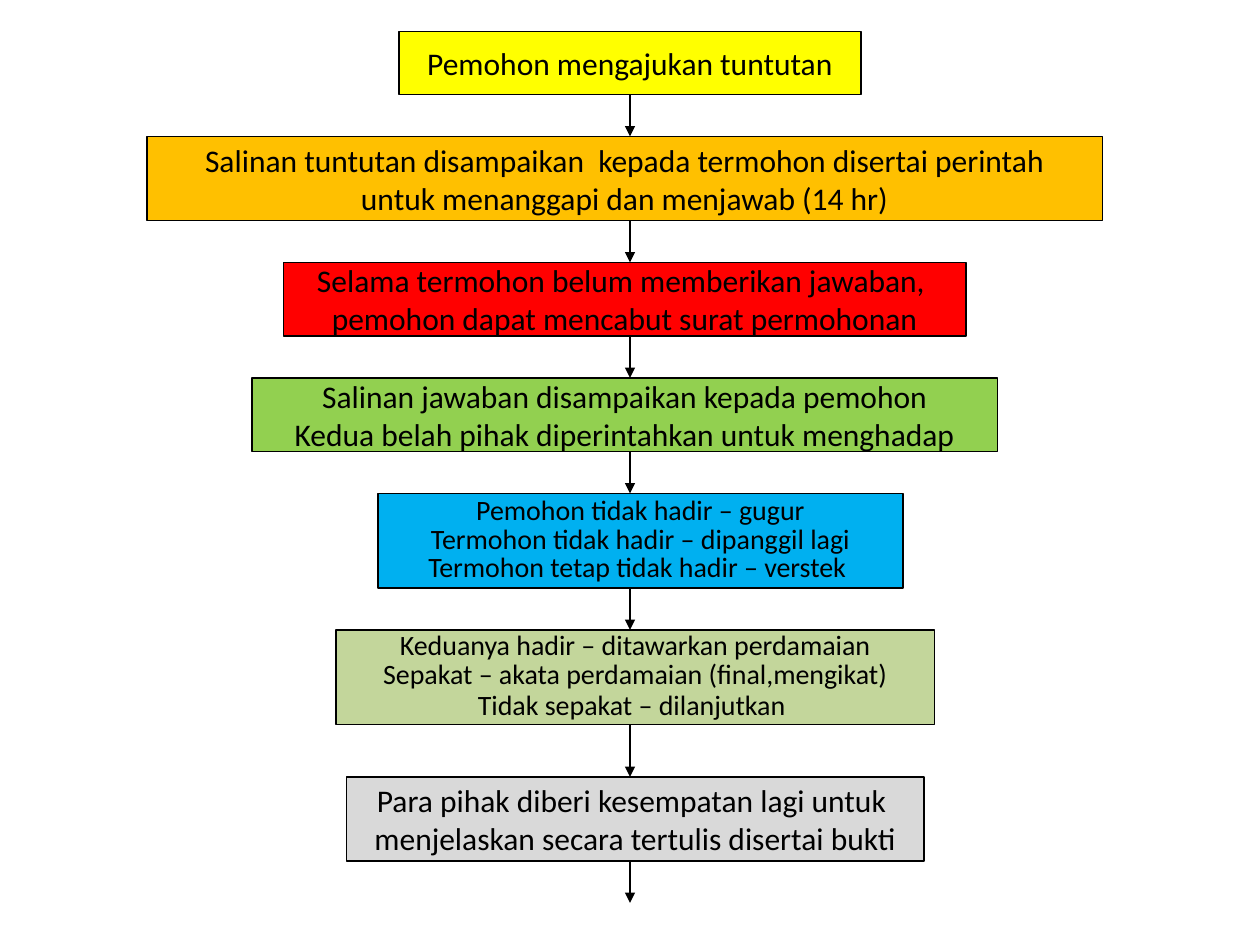
from pptx import Presentation
from pptx.dml.color import RGBColor
from pptx.enum.shapes import MSO_CONNECTOR, MSO_SHAPE
from pptx.enum.text import MSO_ANCHOR, PP_ALIGN
from pptx.oxml.ns import qn
from pptx.util import Inches, Pt
from lxml import etree

RECT = MSO_SHAPE.RECTANGLE
LINE = MSO_CONNECTOR.STRAIGHT
MIDDLE = MSO_ANCHOR.MIDDLE
CENTER = PP_ALIGN.CENTER

BLACK = RGBColor(0x00, 0x00, 0x00)
YELLOW = RGBColor(0xFF, 0xFF, 0x00)
AMBER = RGBColor(0xFF, 0xC0, 0x00)
RED = RGBColor(0xFF, 0x00, 0x00)
GREEN = RGBColor(0x92, 0xD0, 0x50)
BLUE = RGBColor(0x00, 0xB0, 0xF0)
OLIVE = RGBColor(0xC3, 0xD6, 0x9B)
GREY = RGBColor(0xD9, 0xD9, 0xD9)

WIDTH, HEIGHT = Inches(10), Inches(7.5)
COLS, ROWS = 120, 90
AXIS, END = 60, 86
FONT = "Calibri"
LARGE, SMALL = 18, 16
TIGHT = 0.85

STEPS = [
    (38, 3, 44, 6, YELLOW, LARGE, "Pemohon mengajukan tuntutan"),
    (14, 13, 91, 8, AMBER, LARGE,
     "Salinan tuntutan disampaikan  kepada termohon disertai perintah\n"
     "untuk menanggapi dan menjawab (14 hr)"),
    (27, 25, 65, 7, RED, LARGE,
     "Selama termohon belum memberikan jawaban, \n"
     "pemohon dapat mencabut surat permohonan"),
    (24, 36, 71, 7, GREEN, LARGE,
     "Salinan jawaban disampaikan kepada pemohon\n"
     "Kedua belah pihak diperintahkan untuk menghadap"),
    (36, 47, 50, 9, BLUE, SMALL,
     "Pemohon tidak hadir – gugur\n"
     "Termohon tidak hadir – dipanggil lagi\n"
     "Termohon tetap tidak hadir – verstek "),
    (32, 60, 57, 9, OLIVE, SMALL,
     "Keduanya hadir – ditawarkan perdamaian\n"
     "Sepakat – akata perdamaian (final,mengikat)\n"
     "Tidak sepakat – dilanjutkan"),
    (33, 74, 55, 8, GREY, LARGE,
     "Para pihak diberi kesempatan lagi untuk \n"
     "menjelaskan secara tertulis disertai bukti"),
]


def col(n):
    return round(WIDTH * n / COLS)


def row(n):
    return round(HEIGHT * n / ROWS)


def style(run, size):
    run.font.name = FONT
    run.font.size = Pt(size)
    run.font.color.rgb = BLACK


def add_box(slide, left, top, wide, high, fill, size, text):
    box = slide.shapes.add_shape(RECT, col(left), row(top), col(wide), row(high))
    box.shadow.inherit = False
    box.fill.solid()
    box.fill.fore_color.rgb = fill
    box.line.color.rgb = BLACK
    box.line.width = Pt(0.75)
    frame = box.text_frame
    frame.word_wrap = False
    frame.vertical_anchor = MIDDLE
    frame.text = text
    for para in frame.paragraphs:
        para.alignment = CENTER
        if size == SMALL:
            para.line_spacing = TIGHT
        for run in para.runs:
            style(run, size)
    return box


def add_arrow(slide, start, end):
    arrow = slide.shapes.add_connector(LINE, col(AXIS), row(start), col(AXIS), row(end))
    arrow.line.color.rgb = BLACK
    arrow.line.width = Pt(0.75)
    etree.SubElement(arrow.line._get_or_add_ln(), qn("a:tailEnd"), type="triangle")
    etree.SubElement(arrow._element.spPr, qn("a:effectLst"))


def main():
    deck = Presentation()
    deck.slide_width, deck.slide_height = WIDTH, HEIGHT
    slide = deck.slides.add_slide(deck.slide_layouts[6])
    boxes = [add_box(slide, *step) for step in STEPS]
    space = boxes[5].text_frame.paragraphs[-1].add_run()
    space.text = " "
    style(space, LARGE)
    ends = [step[1] for step in STEPS[1:]] + [END]
    for step, end in zip(STEPS, ends):
        add_arrow(slide, step[1] + step[3], end)
    deck.save("out.pptx")


if __name__ == "__main__":
    main()
